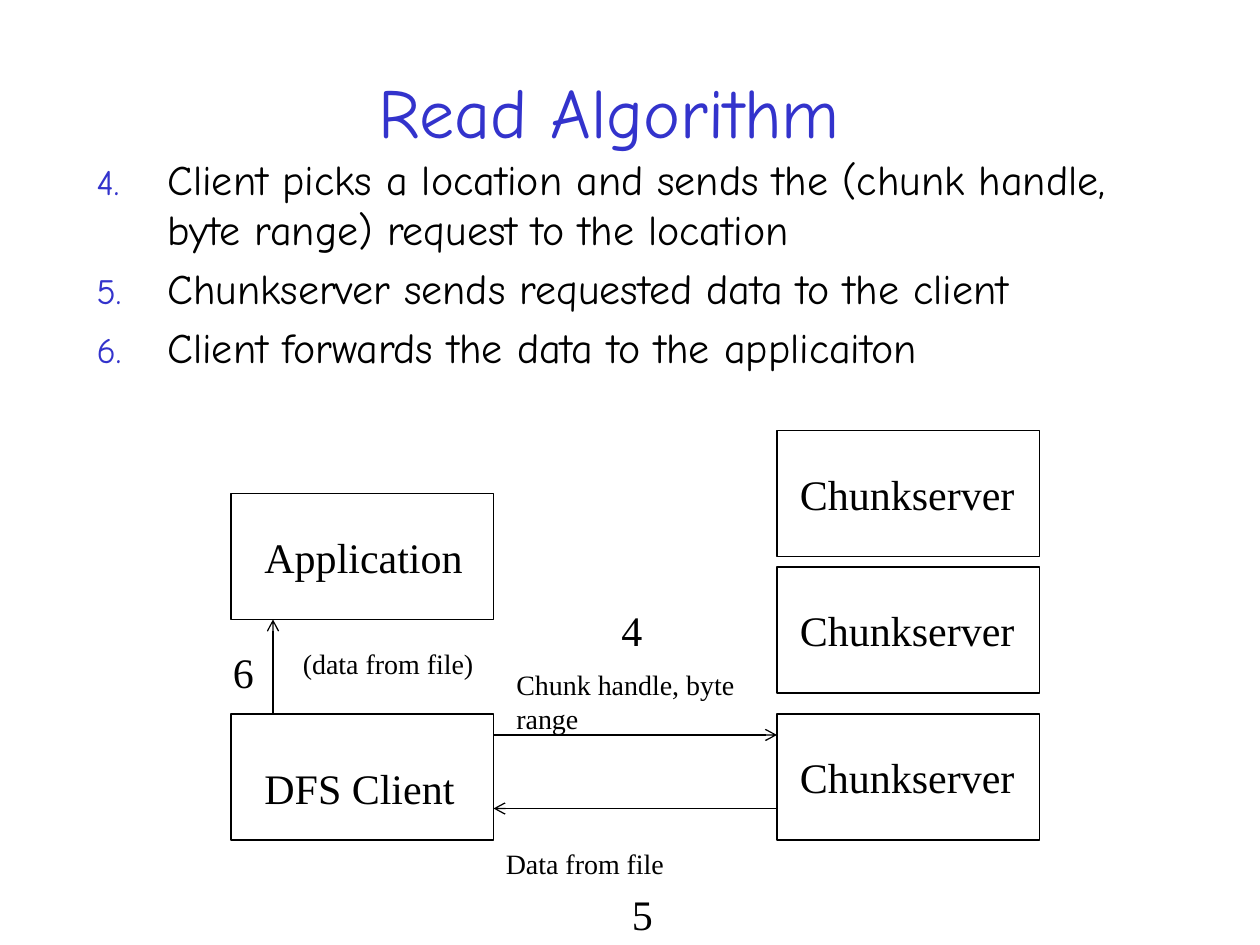
from lxml import etree
from pptx import Presentation
from pptx.dml.color import RGBColor
from pptx.enum.shapes import MSO_CONNECTOR as Connector, MSO_SHAPE as Shape
from pptx.enum.text import MSO_ANCHOR as Anchor, MSO_AUTO_SIZE as AutoSize, PP_ALIGN as Align
from pptx.oxml.ns import qn
from pptx.util import Pt


def color(value):
    return RGBColor.from_string(value)


class ReadDiagram:
    """Holds the style and the current slide; lengths are in points."""
    BLUE, BLACK = "3333CC", "000000"
    HEADING_FONT, LABEL_FONT = "Comic Neue", "Times New Roman"

    def __init__(self, slide):
        self.slide = slide

    def place(self, shape, left, top, width, height):
        frame = {"left": left, "top": top, "width": width, "height": height}
        for name, value in frame.items():
            setattr(shape, name, Pt(value))

    def style(self, paragraph, font, size, ink):
        for name, value in {"name": font, "size": Pt(size), "bold": False}.items():
            setattr(paragraph.font, name, value)
        paragraph.font.color.rgb = color(ink)

    def title(self, text, *box):
        heading = self.slide.shapes.title
        self.place(heading, *box)
        frame = heading.text_frame
        frame.text = text
        for name, value in {"vertical_anchor": Anchor.MIDDLE, "auto_size": AutoSize.NONE}.items():
            setattr(frame, name, value)
        frame.paragraphs[0].alignment = Align.CENTER
        self.style(frame.paragraphs[0], self.HEADING_FONT, 40, self.BLUE)

    def steps(self, items, start, *box):
        body = self.slide.placeholders[1]
        self.place(body, *box)
        frame = body.text_frame
        frame.text = "\n".join(items)
        frame.auto_size = AutoSize.NONE
        frame.vertical_anchor = Anchor.TOP
        for step in frame.paragraphs:
            self.style(step, self.HEADING_FONT, 24, self.BLACK)
            step.space_before = Pt(5)
            self.number(step, start)

    def number(self, step, start):
        props = step._p.get_or_add_pPr()
        indent = Pt(40.5)
        props.set("marL", str(indent))
        props.set("indent", str(-indent))
        ink = etree.Element(qn("a:buClr"))
        etree.SubElement(ink, qn("a:srgbClr"), val=self.BLUE)
        size = etree.Element(qn("a:buSzPct"), val="85000")
        numbering = etree.Element(qn("a:buAutoNum"), type="arabicPeriod", startAt=str(start))
        first = props.find(qn("a:defRPr"))
        for part in (ink, size, numbering):
            if first is None:
                props.append(part)
            else:
                first.addprevious(part)

    def node(self, left, top):
        box = self.slide.shapes.add_shape(
            Shape.RECTANGLE, Pt(left), Pt(top), Pt(NODE_WIDTH), Pt(NODE_HEIGHT))
        box.shadow.inherit = False
        box.fill.background()
        self.outline(box.line)

    def outline(self, line):
        line.color.rgb = color(self.BLACK)
        line.width = Pt(0.75)

    def label(self, text, left, top, width, height=36, size=24, wrap=False):
        box = self.slide.shapes.add_textbox(Pt(left), Pt(top), Pt(width), Pt(height))
        frame = box.text_frame
        frame.text = text
        for name, value in {"word_wrap": wrap, "auto_size": AutoSize.SHAPE_TO_FIT_TEXT}.items():
            setattr(frame, name, value)
        self.style(frame.paragraphs[0], self.LABEL_FONT, size, self.BLACK)

    def arrow(self, *ends):
        link = self.slide.shapes.add_connector(Connector.STRAIGHT, *map(Pt, ends))
        self.outline(link.line)
        etree.SubElement(link.line._get_or_add_ln(), qn("a:tailEnd"), type="arrow")
        etree.SubElement(link._element.spPr, qn("a:effectLst"))


NODE_WIDTH, NODE_HEIGHT = 150, 72
CLIENT_LEFT, SERVER_LEFT = 132, 444
CLIENT_RIGHT = CLIENT_LEFT + NODE_WIDTH
APPLICATION_TOP, CLIENT_TOP = 282, 408
SERVER_TOPS = (246, 324, CLIENT_TOP)


def main():
    deck = Presentation()
    deck.slide_width, deck.slide_height = Pt(720), Pt(540)
    diagram = ReadDiagram(deck.slides.add_slide(deck.slide_layouts[1]))

    # Heading and numbered steps
    diagram.title("Read Algorithm", 42, 18, 612, 90)
    diagram.steps([
        "Client picks a location and sends the (chunk handle, byte range) request to the location",
        "Chunkserver sends requested data to the client",
        "Client forwards the data to the applicaiton",
    ], 4, 48, 84, 612, 138)

    # Application and client
    for name, top, drop, width in (("Application", APPLICATION_TOP, 18, 129),
                                   ("DFS Client", CLIENT_TOP, 24, 125)):
        diagram.node(CLIENT_LEFT, top)
        diagram.label(name, CLIENT_LEFT + 12, top + drop, width)

    # Chunkservers
    for top in SERVER_TOPS:
        diagram.node(SERVER_LEFT, top)
        diagram.label("Chunkserver", SERVER_LEFT + 6, top + 18, 138)

    # Messages
    diagram.arrow(156, CLIENT_TOP, 156, APPLICATION_TOP + NODE_HEIGHT)
    diagram.arrow(SERVER_LEFT, 462, CLIENT_RIGHT, 462)
    diagram.arrow(CLIENT_RIGHT, 420, SERVER_LEFT, 420)
    for message, left, top, width, height in (
            (" (data from file)", 162, 366, 240, 27),
            ("Chunk handle, byte range", 288, 378, 174, 46),
            ("Data from file", 282, 480, 222, 27)):
        diagram.label(message, left, top, width, height, size=16, wrap=True)

    # Step numbers beside the messages
    for step, left, top in (("6", 126, 366), ("4", 348, 342), ("5", 354, 504)):
        diagram.label(step, left, top, 27)

    deck.save("out.pptx")


if __name__ == "__main__":
    main()
